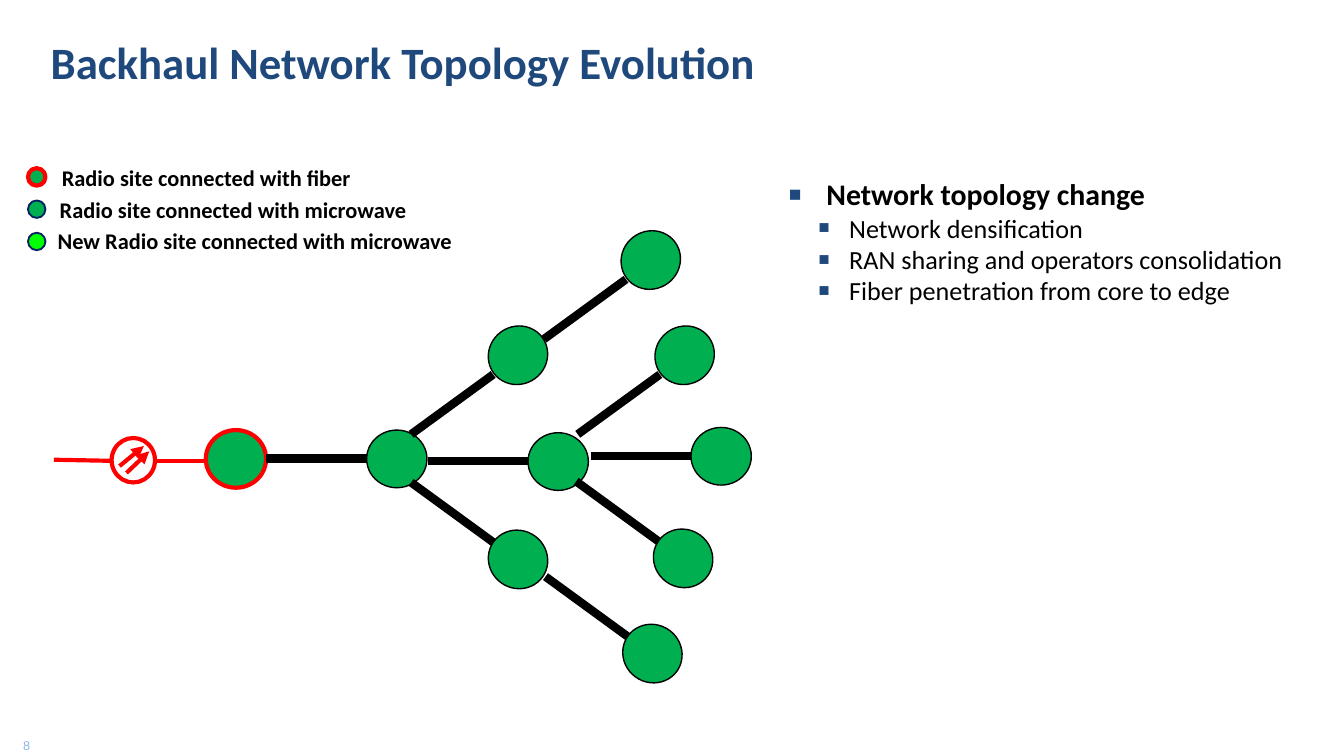
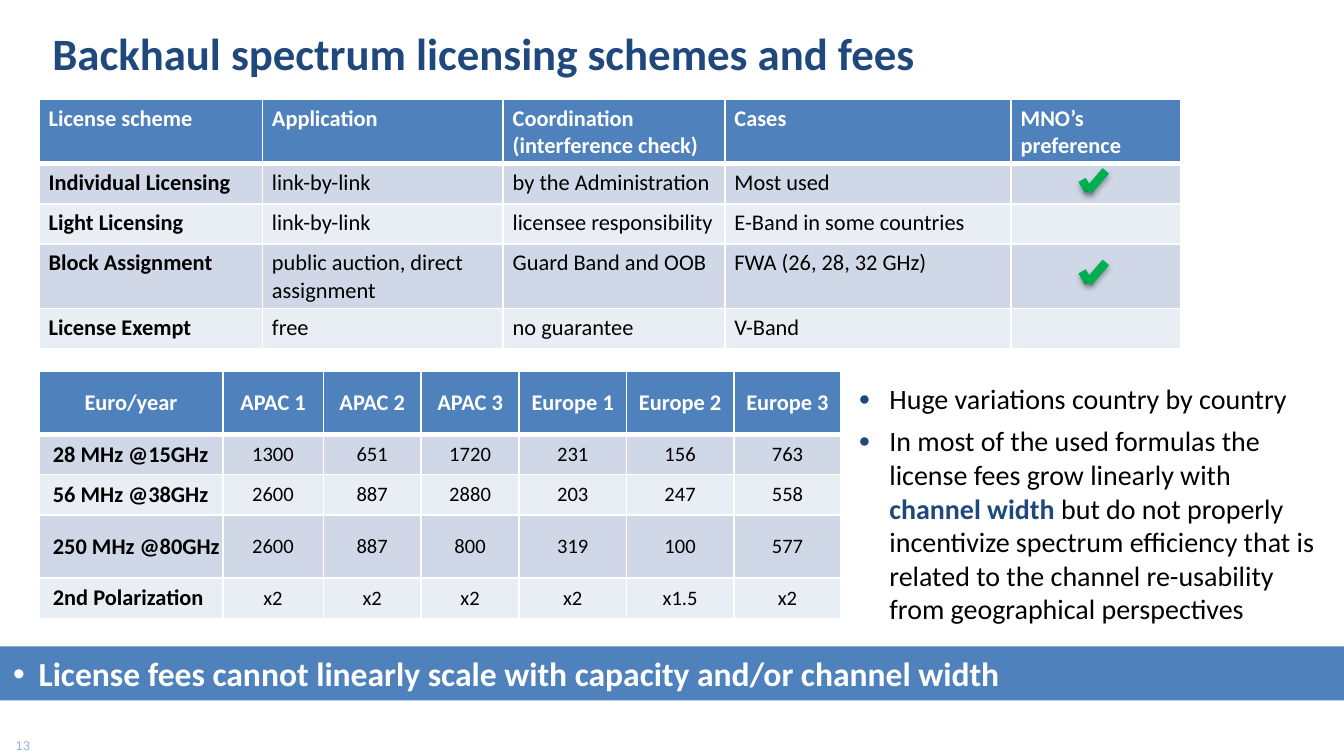
from lxml import etree
from pptx import Presentation
from pptx.dml.color import RGBColor
from pptx.enum.shapes import MSO_CONNECTOR, MSO_SHAPE
from pptx.enum.text import MSO_ANCHOR as Anchor, PP_ALIGN as Align
from pptx.oxml.ns import qn
from pptx.util import Cm, Pt

NAVY = RGBColor(0x1F, 0x49, 0x7D)
DARK_BLUE = RGBColor(0x00, 0x20, 0x60)
BLUE = RGBColor(0x4F, 0x81, 0xBD)
PALE_BLUE = RGBColor(0x8E, 0xB4, 0xE3)
ROW_DARK = RGBColor(0xD0, 0xD8, 0xE8)
ROW_LIGHT = RGBColor(0xE9, 0xED, 0xF4)
GREEN = RGBColor(0x00, 0xB0, 0x50)
LIME = RGBColor(0x00, 0xFF, 0x00)
RED = RGBColor(0xFF, 0x00, 0x00)
BLACK = RGBColor(0x00, 0x00, 0x00)
WHITE = RGBColor(0xFF, 0xFF, 0xFF)

# Content: topology slide
LEGEND = [
    ("Radio site connected with fiber", GREEN, RED, 2.25),
    ("Radio site connected with microwave", GREEN, DARK_BLUE, 1),
    ("New Radio site connected with microwave", LIME, DARK_BLUE, 1),
]
TOPOLOGY_HEADING = "Network topology change"
TOPOLOGY_POINTS = [
    "Network densification",
    "RAN sharing and operators consolidation",
    "Fiber penetration from core to edge",
]
FIBER_SITE = (3.89, 8.13)
# Microwave sites: left, top, slope of the link that arrives (-1 up, 0 level, 1 down)
MICROWAVE_SITES = [
    (6.93, 8.13, 0), (9.98, 8.18, 0), (13.06, 8.08, 0),
    (12.34, 10.01, 1), (12.37, 6.17, -1),
    (9.22, 10.03, 1), (11.76, 11.81, 1),
    (9.22, 6.17, -1), (11.73, 4.37, -1),
]
FIBER_ARROWS = [((2.26, 8.81), (2.72, 8.43)), ((2.39, 8.94), (2.82, 8.53))]
FIBER_LINES = [((2.9, 8.71), (3.94, 8.71)), ((1.02, 8.69), (2.08, 8.71))]

# Content: licensing slide
LICENSE_COLUMNS = [4.22, 4.55, 4.19, 5.41, 3.2]
LICENSE_ROWS = [
    ["License scheme", "Application", "Coordination (interference check)", "Cases",
     "MNO’s preference"],
    ["Individual Licensing", "link-by-link", "by the Administration", "Most used", ""],
    ["Light Licensing", "link-by-link", "licensee responsibility",
     "E-Band in some countries", ""],
    ["Block Assignment", "public auction, direct assignment", "Guard Band and OOB",
     "FWA (26, 28, 32 GHz)", ""],
    ["License Exempt", "free", "no guarantee", "V-Band", ""],
]
FEE_COLUMNS = [3.47, 1.9, 1.85, 1.85, 2.03, 2.03, 2.03]
FEE_ROWS = [
    ["Euro/year", "APAC 1", "APAC 2", "APAC 3", "Europe 1", "Europe 2", "Europe 3"],
    ["28 MHz @15GHz", "1300", "651", "1720", "231", "156", "763"],
    ["56 MHz @38GHz", "2600", "887", "2880", "203", "247", "558"],
    ["250 MHz @80GHz", "2600", "887", "800", "319", "100", "577"],
    ["2nd Polarization", "x2", "x2", "x2", "x2", "x1.5", "x2"],
]
ROW_HEIGHTS = [1.2, 0.76, 0.76, 1.2, 0.76]
FEE_POINTS = [
    "Huge variations country by country",
    [("In most of the used formulas the license fees grow linearly with ", {}),
     ("channel width ", {"bold": True, "color": NAVY}),
     ("but do not properly incentivize spectrum efficiency that is related to the "
      "channel re-usability from geographical perspectives", {})],
]
CONCLUSION = "License fees cannot linearly scale with capacity and/or channel width"
CHECK_POINTS = [(20.45, 3.4), (20.57, 3.61), (20.9, 3.23)]
CHECK_DROPS = [0, 1.73]


def add_element(parent, tag, **attributes):
    element = etree.SubElement(parent, qn(tag))
    for name, value in attributes.items():
        element.set(name, str(value))
    return element


def write(frame, text, size=12, color=BLACK, bold=False, font="Calibri", align=None,
          left=0, first=0, before=0, level=0, bullet=None, bullet_color=NAVY,
          bullet_size=70):
    """Add one paragraph; text is a string or a list of (text, format changes)."""
    paragraph = frame.paragraphs[0]
    if paragraph.runs:
        paragraph = frame.add_paragraph()
    paragraph.alignment = align
    paragraph.level = level
    paragraph.space_before = Pt(before)
    properties = paragraph._p.get_or_add_pPr()
    properties.set("marL", str(Cm(left)))
    properties.set("indent", str(Cm(first)))
    if bullet:
        bullet_fill = add_element(properties, "a:buClr")
        add_element(bullet_fill, "a:srgbClr", val=bullet_color)
        add_element(properties, "a:buSzPct", val=bullet_size * 1000)
        add_element(properties, "a:buFont", typeface="Arial")
        add_element(properties, "a:buChar", char=bullet)
    if not text:
        add_element(paragraph._p, "a:endParaRPr", sz=size * 100)
        return
    for words, changes in [(text, {})] if isinstance(text, str) else text:
        run = paragraph.add_run()
        run.text = words
        run.font.name = font
        run.font.size = Pt(size)
        run.font.bold = changes.get("bold", bold)
        run.font.color.rgb = changes.get("color", color)


def set_margins(holder, horizontal, vertical):
    holder.margin_left = holder.margin_right = Cm(horizontal)
    holder.margin_top = holder.margin_bottom = Cm(vertical)


def add_box(slide, left, top, width, height, margins=(0.25, 0.13), anchor=Anchor.TOP):
    frame = slide.shapes.add_textbox(Cm(left), Cm(top), Cm(width), Cm(height)).text_frame
    frame.word_wrap = True
    frame.vertical_anchor = anchor
    set_margins(frame, *margins)
    return frame


def add_shape(slide, kind, left, top, width, height, fill=None, line=None, weight=0.75,
              rotation=0):
    shape = slide.shapes.add_shape(kind, Cm(left), Cm(top), Cm(width), Cm(height))
    shape.shadow.inherit = False
    shape.rotation = rotation
    if fill is None:
        shape.fill.background()
    else:
        shape.fill.solid()
        shape.fill.fore_color.rgb = fill
    if line is None:
        shape.line.fill.background()
    else:
        shape.line.color.rgb = line
        shape.line.width = Pt(weight)
    return shape


def add_line(slide, start, end, color, weight, arrow=False, shadow=False):
    points = [Cm(value) for value in (*start, *end)]
    line = slide.shapes.add_connector(MSO_CONNECTOR.STRAIGHT, *points)
    line.line.color.rgb = color
    line.line.width = Pt(weight)
    if arrow:
        add_element(line.line._get_or_add_ln(), "a:tailEnd", type="triangle")
    effects = add_element(line._element.spPr, "a:effectLst")
    if shadow:
        outer = add_element(effects, "a:outerShdw", blurRad=Pt(3.1), dist=Pt(1.8),
                            dir=5400000, rotWithShape=0)
        shade = add_element(outer, "a:srgbClr", val=BLACK)
        add_element(shade, "a:alpha", val=35000)


def set_borders(cell, row):
    properties = cell._tc.get_or_add_tcPr()
    weights = {"L": 1, "R": 1, "T": 3 if row == 1 else 1, "B": 3 if row == 0 else 1}
    for side, weight in weights.items():
        border = add_element(properties, f"a:ln{side}", w=Pt(weight))
        add_element(add_element(border, "a:solidFill"), "a:srgbClr", val=WHITE)


def add_table(slide, rows, columns, left, top, margins, anchor, cell_format):
    """Build a banded table; cell_format gives text options for a row and column."""
    table = slide.shapes.add_table(
        len(rows), len(columns), Cm(left), Cm(top), Cm(sum(columns)),
        Cm(sum(ROW_HEIGHTS))).table
    for column, width in zip(table.columns, columns):
        column.width = Cm(width)
    for r, texts in enumerate(rows):
        table.rows[r].height = Cm(ROW_HEIGHTS[r])
        for c, text in enumerate(texts):
            cell = table.cell(r, c)
            set_margins(cell, *margins)
            cell.vertical_anchor = anchor
            set_borders(cell, r)
            cell.fill.solid()
            cell.fill.fore_color.rgb = BLUE if r == 0 else (ROW_LIGHT, ROW_DARK)[r % 2]
            write(cell.text_frame, text, bold=r == 0 or c == 0,
                  color=WHITE if r == 0 else BLACK, **cell_format(r, c))


def license_format(row, column):
    return {}


def fee_format(row, column):
    if row and column == 0:
        return {"first": 0.24}
    return {"align": Align.CENTER, "size": 11 if row else 12}


def start_slide(presentation, title, number, left, top):
    slide = presentation.slides.add_slide(presentation.slide_layouts[6])
    footer = add_box(slide, -0.25, 13.72, 1.07, 0.76, anchor=Anchor.MIDDLE)
    write(footer, number, size=6.8, font="Arial", color=PALE_BLUE, align=Align.RIGHT)
    write(add_box(slide, left, top, 19.81, 1.19), title, size=24, color=NAVY, bold=True)
    return slide


def add_site(slide, left, top, line=BLACK, weight=0.75, rotation=0):
    add_shape(slide, MSO_SHAPE.OVAL, left, top, 1.14, 1.09, GREEN, line, weight, rotation)


def build_topology(presentation):
    slide = start_slide(presentation, "Backhaul Network Topology Evolution", "8", 0.71, 0.53)

    # Points on the right
    points = add_box(slide, 14.76, 3.25, 9.96, 2.72, margins=(0.15, 0.08))
    write(points, TOPOLOGY_HEADING, size=16, bold=True, left=0.71, first=-0.71, bullet="■")
    for text in TOPOLOGY_POINTS:
        write(points, text, size=14, level=1, left=1.14, first=-0.58, bullet="■")

    # Legend
    for i, (text, fill, line, weight) in enumerate(LEGEND):
        label = add_box(slide, 0.99 - 0.04 * i, 2.77 + 0.59 * i, 10.67, 1.19,
                        margins=(0.18, 0.1), anchor=Anchor.MIDDLE)
        write(label, text, bold=True)
        add_shape(slide, MSO_SHAPE.OVAL, 0.53, 3.18 + 0.61 * i, 0.33, 0.33,
                  fill, line, weight)

    # Sites, each with the link from its parent
    add_site(slide, *FIBER_SITE, line=RED, weight=2.25)
    for left, top, slope in MICROWAVE_SITES:
        add_site(slide, left, top, rotation=36.2 * slope % 360)
        if slope:
            end = (left + 0.1, top + 0.565 - 0.345 * slope)
            start = (end[0] - 1.55, end[1] - 1.13 * slope)
        else:
            end = (left, top + 0.54)
            start = (left - 1.9, end[1])
        add_line(slide, start, end, BLACK, 4.5)

    # Fiber feed
    add_shape(slide, MSO_SHAPE.OVAL, 2.11, 8.28, 0.82, 0.84, line=RED, weight=2.25)
    for start, end in FIBER_ARROWS:
        add_line(slide, start, end, RED, 2.25, arrow=True)
    for start, end in FIBER_LINES:
        add_line(slide, start, end, RED, 2.25)


def build_licensing(presentation):
    slide = start_slide(presentation, "Backhaul spectrum licensing schemes and fees", "13",
                        0.74, 0.36)

    # License schemes with check marks
    add_table(slide, LICENSE_ROWS, LICENSE_COLUMNS, 0.74, 1.88, (0.18, 0.1), Anchor.TOP,
              license_format)
    for drop in CHECK_DROPS:
        corners = [(x, y + drop) for x, y in CHECK_POINTS]
        for start, end in zip(corners, corners[1:]):
            add_line(slide, start, end, GREEN, 4.5, shadow=True)

    # Fees and remarks
    add_table(slide, FEE_ROWS, FEE_COLUMNS, 0.74, 7.01, (0.02, 0.02), Anchor.MIDDLE,
              fee_format)
    remarks = add_box(slide, 15.98, 7.09, 9.17, 4.93)
    for i, text in enumerate(FEE_POINTS):
        write(remarks, text, size=15, left=0.58, first=-0.58, before=4.5 * i, bullet="●")

    # Conclusion band
    band = add_shape(slide, MSO_SHAPE.RECTANGLE, 0, 12.22, 25.4, 1.02, fill=BLUE).text_frame
    band.word_wrap = True
    band.vertical_anchor = Anchor.TOP
    set_margins(band, 0.25, 0.13)
    write(band, CONCLUSION, size=18, color=WHITE, bold=True, align=Align.LEFT,
          left=0.48, first=-0.48, bullet="•", bullet_color=WHITE, bullet_size=100)


def main():
    presentation = Presentation()
    presentation.slide_width = Cm(25.4)
    presentation.slide_height = Cm(14.29)
    build_topology(presentation)
    build_licensing(presentation)
    presentation.save("out.pptx")


if __name__ == "__main__":
    main()
